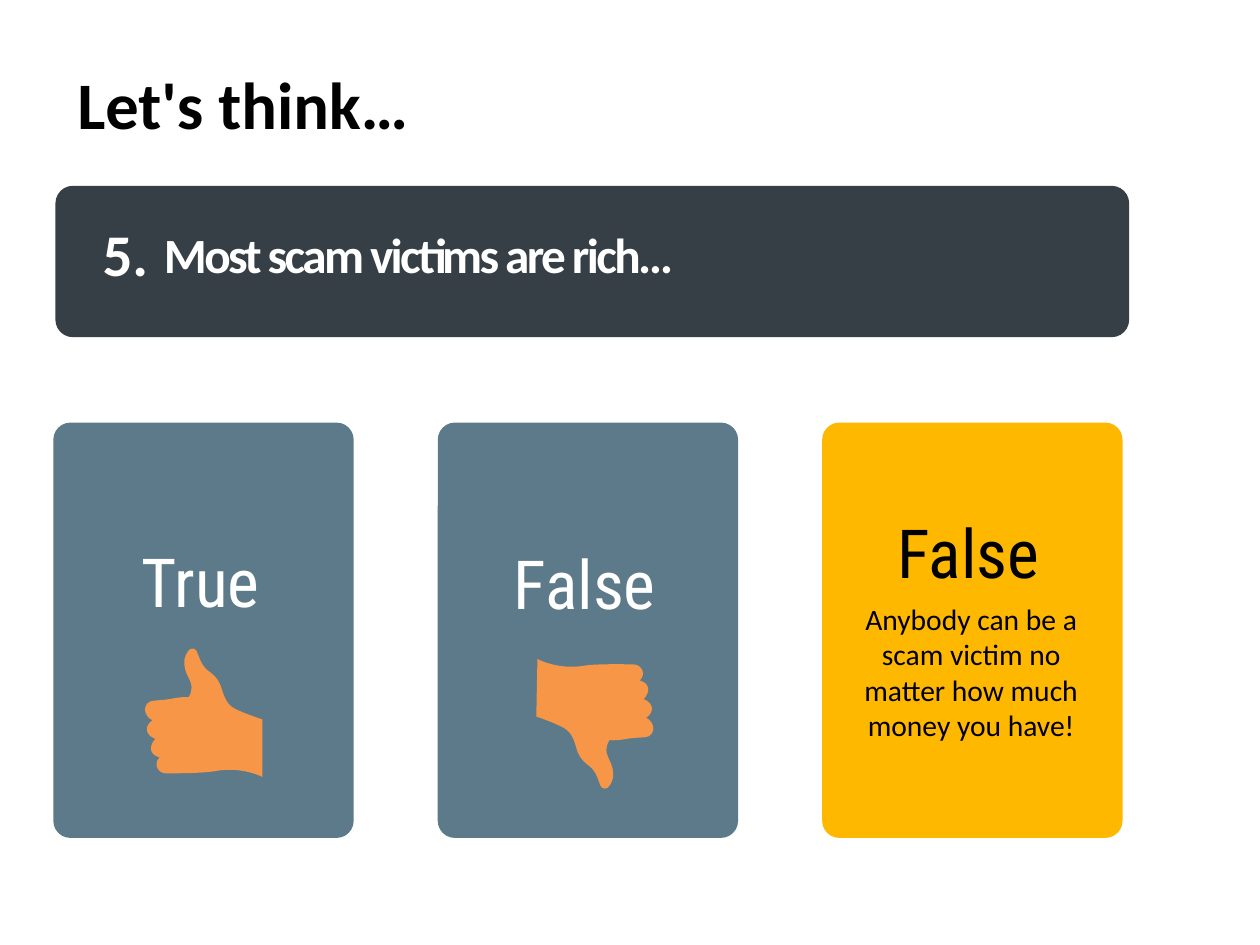
from dataclasses import dataclass

from lxml.etree import SubElement as Sub
from pptx import Presentation
from pptx.dml.color import RGBColor as Rgb
from pptx.enum.shapes import MSO_SHAPE as Shape
from pptx.enum.text import MSO_AUTO_SIZE as Fit, PP_ALIGN as Align
from pptx.oxml.ns import qn
from pptx.util import Cm, Pt


@dataclass(frozen=True)
class Theme:
    ink: str = "000000"
    paper: str = "FFFFFF"
    band: str = "363F45"
    choice: str = "5D7A8A"
    answer: str = "FFB800"
    thumb: str = "F79646"
    sans: str = "Calibri"
    slim: str = "Roboto Condensed"
    title: int = 54
    number: int = 48
    claim: int = 40
    verdict: int = 55
    body: int = 24


T = Theme()

# Thumb outline on a grid: a start, then curves as two control
# points and an end, or a line as its end alone
GRID = 132, 145
START = 53, 0
STEPS = [
    (52, 0, 51, 1, 50, 1), (47, 4, 43, 10, 44, 18),
    (45, 34, 58, 38, 49, 55), (49, 55, 42, 54, 28, 57),
    (16, 59, 10, 58, 5, 60), (-4, 65, -1, 77, 8, 81),
    (0, 86, -2, 97, 11, 102), (4, 110, 4, 120, 16, 123),
    (8, 131, 15, 141, 23, 141), (86, 141, 76, 137, 95, 137),
    (117, 137, 132, 145, 132, 145), (132, 80),
    (132, 80, 113, 74, 101, 68), (96, 65, 91, 62, 86, 45),
    (81, 28, 70, 27, 66, 20), (63, 17, 60, 8, 58, 3),
    (57, 1, 55, 0, 53, 0),
]


def paint(shape, color):
    shape.shadow.inherit = False
    shape.fill.solid()
    shape.fill.fore_color.rgb = Rgb.from_string(color)
    shape.line.fill.background()


def panel(parts, box, color, radius):
    """Rounded panel; the corner radius is in cm."""
    shape = parts.add_shape(Shape.ROUNDED_RECTANGLE, *map(Cm, box))
    shape.adjustments[0] = radius / min(box[2:])
    paint(shape, color)


def write(parts, text, box, size, color=T.ink, font=T.sans, bold=False,
          align=Align.LEFT, pad=0.05, wrap=True, lead=None, track=None):
    frame = parts.add_textbox(*map(Cm, box)).text_frame
    frame.word_wrap = wrap
    frame.auto_size = Fit.SHAPE_TO_FIT_TEXT
    frame.margin_left = frame.margin_right = Cm(pad)
    frame.margin_top = frame.margin_bottom = Cm(min(pad, 0.15))
    para = frame.paragraphs[0]
    para.alignment = align
    if lead:
        para.line_spacing = lead
    run = para.add_run()
    run.text = text
    run.font.name, run.font.size, run.font.bold = font, Pt(size), bold
    run.font.color.rgb = Rgb.from_string(color)
    if track:
        run.font._element.set("spc", str(round(track * 100)))


def thumb(parts, box, turn=0):
    pen = parts.build_freeform(*START)
    pen.add_line_segments([step[-2:] for step in STEPS], close=True)
    shape = pen.convert_to_shape()
    shape.left, shape.top, shape.width, shape.height = map(Cm, box)
    shape.rotation = turn
    paint(shape, T.thumb)

    # Curved segments
    trail = next(shape._element.iter(qn("a:path")))
    for child in list(trail):
        trail.remove(child)
    trail.set("w", str(GRID[0]))
    trail.set("h", str(GRID[1]))

    def draw(kind, dots):
        node = Sub(trail, qn(kind))
        for x, y in zip(dots[::2], dots[1::2]):
            Sub(node, qn("a:pt"), x=str(x), y=str(y))

    draw("a:moveTo", START)
    for step in STEPS:
        draw("a:lnTo" if len(step) == 2 else "a:cubicBezTo", step)
    Sub(trail, qn("a:close"))


def banner(parts, box):
    """Dark band with the numbered claim."""
    x, y, w, h = box
    panel(parts, box, T.band, 0.5)
    write(parts, "5.", (x + 1.3, y + 0.87, 1.42, 2.16), T.number,
          color=T.paper, bold=True, wrap=False)
    write(parts, "Most scam victims are rich…",
          (x + 2.86, y + 0.95, w - 3.63, 1.96), T.claim,
          color=T.paper, bold=True, pad=0.25, track=-2.1)


def choice(parts, box, word, spot, hand, turn=0):
    """Card with a word above a thumb; spot is the word's place."""
    x, y, w, h = box
    group = parts.add_group_shape().shapes
    panel(group, box, T.choice, 0.49)
    left, top, wide = spot
    write(group, word, (x + left, y + top, wide, 2.46), T.verdict,
          color=T.paper, font=T.slim, wrap=False)
    thumb(parts, (x + hand[0], y + hand[1], 3.35, 3.68), turn)


def answer(parts, box):
    """Card with the verdict and its reason."""
    x, y, w, h = box
    group = parts.add_group_shape().shapes
    panel(group, box, T.answer, 0.49)
    write(group, "False", (x + 0.54, y + 1.22, 7.29, 3.35), T.verdict,
          font=T.slim, align=Align.CENTER, pad=0.15, lead=1.5)
    write(group, "Anybody can be a scam victim no matter how much money you have!",
          (x + 0.64, y + 5.06, 7.26, 4.22), T.body, align=Align.CENTER)


def main():
    deck = Presentation()
    deck.slide_width, deck.slide_height = Cm(36.12), Cm(27.1)
    parts = deck.slides.add_slide(deck.slide_layouts[6]).shapes

    # Title and claim
    write(parts, "Let's think…", (2.17, 1.75, 13.49, 2.41), T.title, bold=True)
    banner(parts, (1.59, 5.33, 30.78, 4.34))

    # Row of three cards
    yes, no, truth = [(1.53 + n * 11.02, 12.12, 8.61, 11.91) for n in range(3)]
    choice(parts, yes, "True", (2.49, 3.32, 3.73), (2.64, 6.48))
    choice(parts, no, "False", (2.13, 3.38, 4.34), (2.82, 6.81), turn=181.1)
    answer(parts, truth)

    deck.save("out.pptx")


if __name__ == "__main__":
    main()
